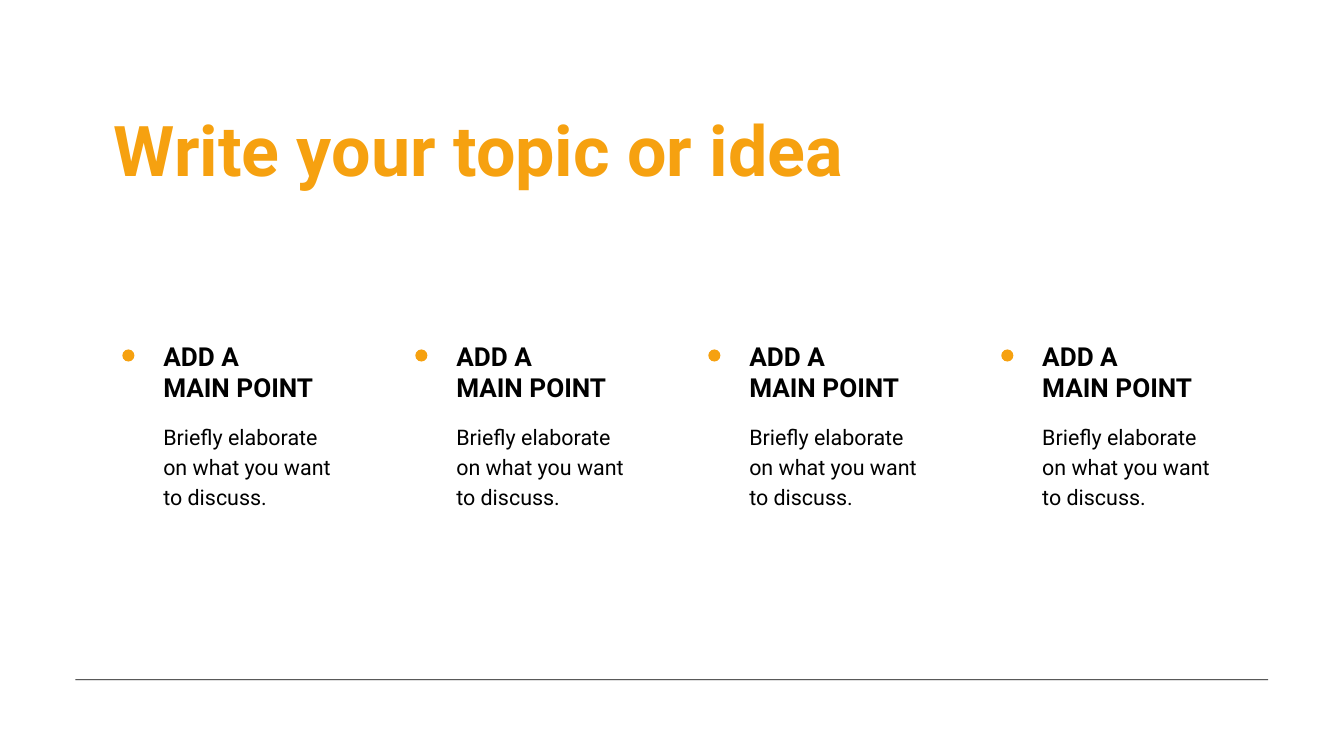
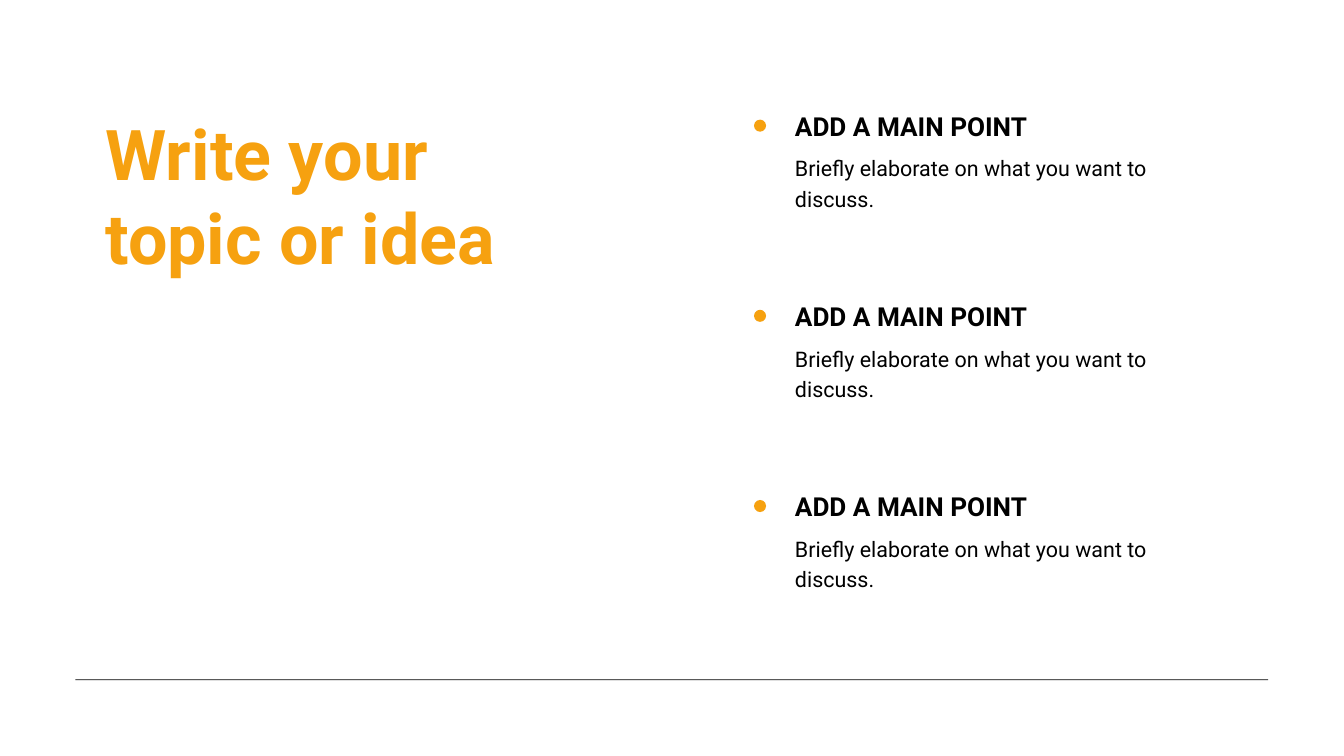
from dataclasses import dataclass

from pptx import Presentation
from pptx.dml.color import RGBColor as RGB
from pptx.enum.shapes import MSO_SHAPE as Shape
from pptx.enum.text import MSO_AUTO_SIZE as AutoSize
from pptx.util import Inches, Pt


@dataclass(frozen=True)
class TextStyle:
    """Size, line pitch, colour and weight of one kind of text."""
    size: float
    pitch: float
    color: RGB
    bold: bool = False


class Theme:
    """Colours and type shared by the slides."""
    font = "Roboto"
    accent = RGB(0xF6, 0xA1, 0x10)
    ink = RGB(0, 0, 0)
    paper = RGB(0xFF, 0xFF, 0xFF)
    title = TextStyle(75, 90, accent, True)
    heading = TextStyle(28, 33.6, ink, True)
    body = TextStyle(23, 32.2, ink)


TITLE = "Write your topic or idea"
BODY = "Briefly elaborate on what you want to discuss."
DOT = 0.18
INDENT = 0.61


def add_text(s, box, text, style):
    """Add a marginless text box with one paragraph per line of text."""
    sp = s.shapes.add_textbox(*map(Inches, box))
    tf = sp.text_frame
    tf.margin_left = tf.margin_top = tf.margin_right = tf.margin_bottom = 0
    tf.word_wrap = True
    tf.auto_size = AutoSize.SHAPE_TO_FIT_TEXT
    tf.text = text
    for p in tf.paragraphs:
        p.line_spacing = Pt(style.pitch)
        for r in p.runs:
            r.font.name = Theme.font
            r.font.size = Pt(style.size)
            r.font.bold = style.bold
            r.font.color.rgb = style.color


def add_filled(s, kind, box, color):
    """Add a plain filled shape without outline or shadow."""
    sp = s.shapes.add_shape(kind, *map(Inches, box))
    sp.shadow.inherit = False
    sp.fill.solid()
    sp.fill.fore_color.rgb = color
    sp.line.fill.background()


def add_point(s, box, heading, heading_height, body_top):
    """Place a dot, a heading and a description inside the box."""
    left, top, width, height = box
    text_left, text_width = left + INDENT, width - INDENT
    add_filled(s, Shape.OVAL, (left, top + 0.14, DOT, DOT), Theme.accent)
    add_text(s, (text_left, top, text_width, heading_height),
             heading, Theme.heading)
    add_text(s, (text_left, top + body_top, text_width, height - body_top),
             BODY, Theme.body)


def add_base(prs):
    """Add a blank slide with the background and the footer rule."""
    s = prs.slides.add_slide(prs.slide_layouts[6])
    s.background.fill.solid()
    s.background.fill.fore_color.rgb = Theme.paper
    add_filled(s, Shape.RECTANGLE, (1.12, 10.11, 17.75, 0.01), Theme.ink)
    return s


def add_columns_slide(prs, box, count=4, pitch=4.36):
    """Build the slide whose points stand side by side."""
    left, top, width, height = box
    s = add_base(prs)
    add_text(s, (1.69, 1.59, 14.68, 1.25), TITLE, Theme.title)
    for i in range(count):
        add_point(s, (left + i * pitch, top, width, height),
                  "ADD A\nMAIN POINT", 0.93, 1.19)


def add_rows_slide(prs, box, count=3, pitch=2.83):
    """Build the slide whose points are stacked beside the title."""
    left, top, width, height = box
    s = add_base(prs)
    for i in range(count):
        add_point(s, (left, top + i * pitch, width, height),
                  "ADD A MAIN POINT", 0.46, 0.61)
    add_text(s, (1.57, 1.64, 6.64, 2.5), TITLE, Theme.title)


def main():
    """Build and save the presentation."""
    prs = Presentation()
    prs.slide_width, prs.slide_height = Inches(20), Inches(11.25)
    add_columns_slide(prs, (1.82, 5.06, 3.28, 2.48))
    add_rows_slide(prs, (11.22, 1.64, 6.03, 1.46))
    prs.save("out.pptx")


if __name__ == "__main__":
    main()
